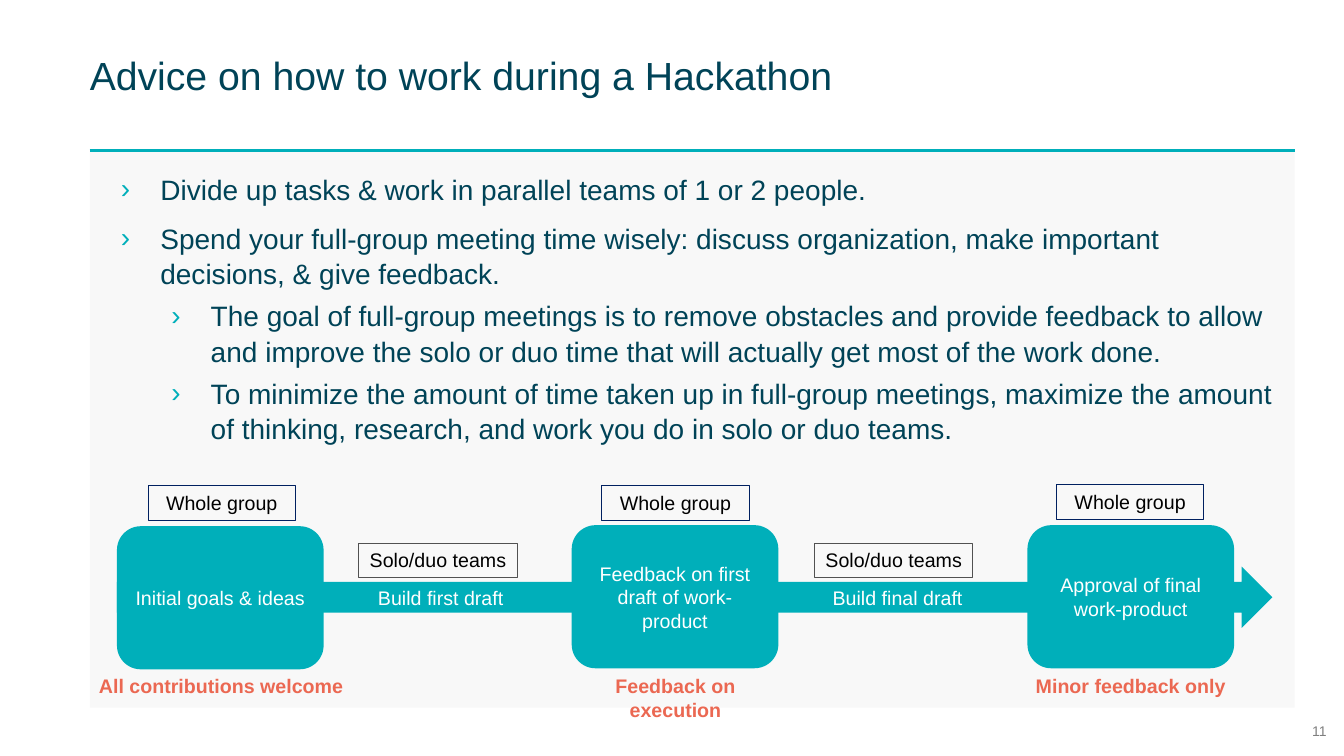
from lxml.etree import SubElement as add_element
from pptx import Presentation
from pptx.dml.color import RGBColor
from pptx.enum.shapes import MSO_CONNECTOR as Connector, MSO_SHAPE as Preset
from pptx.enum.text import MSO_ANCHOR as Anchor, MSO_AUTO_SIZE as AutoSize, PP_ALIGN as Align
from pptx.oxml.ns import qn
from pptx.util import Inches, Pt

TEAL = RGBColor(0x00, 0xAF, 0xBA)
DARK_TEAL = RGBColor(0x00, 0x43, 0x57)
CORAL = RGBColor(0xEB, 0x68, 0x52)
NAVY = RGBColor(0x00, 0x20, 0x60)
DARK_GRAY = RGBColor(0x51, 0x51, 0x51)
MID_GRAY = RGBColor(0x7F, 0x7F, 0x7F)
PALE_GRAY = RGBColor(0xF2, 0xF2, 0xF2)
BLACK = RGBColor(0x00, 0x00, 0x00)
WHITE = RGBColor(0xFF, 0xFF, 0xFF)

LEFT, RULE_TOP, WIDTH, BODY_HEIGHT = 0.89, 1.49, 11.95, 5.53
LABEL_HEIGHT = 0.34
BULLETS = [
    (0, "Divide up tasks & work in parallel teams of 1 or 2 people."),
    (0, "Spend your full-group meeting time wisely: discuss organization, "
        "make important decisions, & give feedback."),
    (1, "The goal of full-group meetings is to remove obstacles and provide feedback "
        "to allow and improve the solo or duo time that will actually get most of the work done."),
    (1, "To minimize the amount of time taken up in full-group meetings, maximize the amount "
        "of thinking, research, and work you do in solo or duo teams."),
]
STAGES = [
    (1.16, 5.22, "Initial goals & ideas", 1.47, 4.82),
    (5.67, 5.21, "Feedback on first draft of work- product", 5.97, 4.82),
    (10.19, 5.21, "Approval of final work-product", 10.48, 4.81),
]
DRAFTS = [(3.56, 3.65, "Build first draft"), (8.08, 8.16, "Build final draft")]
CAPTIONS = [
    (0.86, 2.67, 0.34, "All contributions welcome"),
    (5.53, 2.34, 0.57, "Feedback on execution"),
    (10.14, 2.15, 0.34, "Minor feedback only"),
]


def apply_format(target, values):
    """Set each attribute of the target from a dict of format values."""
    for name, value in values.items():
        setattr(target, name, value)


class SlideBuilder:
    """Hold the style and the current slide, and draw each kind of element."""

    font_name = "Arial"

    def __init__(self, slide):
        """Keep the slide to draw on."""
        self.slide = slide

    def fill_text(self, shape, text, size, color, bold=False, align=Align.CENTER,
                  anchor=Anchor.TOP, inset=(0.1, 0.05)):
        """Put one formatted paragraph into a shape."""
        frame = shape.text_frame
        across, down = (Inches(value) for value in inset)
        apply_format(frame, {
            "word_wrap": True, "auto_size": AutoSize.NONE, "vertical_anchor": anchor,
            "margin_left": across, "margin_right": across,
            "margin_top": down, "margin_bottom": down})
        paragraph = frame.paragraphs[0]
        paragraph.alignment = align
        self.add_run(paragraph, text, size, color, bold)

    def add_run(self, paragraph, text, size, color, bold=False):
        """Add a formatted run to a paragraph."""
        run = paragraph.add_run()
        run.text = text
        apply_format(run.font, {"name": self.font_name, "size": Pt(size), "bold": bold})
        run.font.color.rgb = color

    def shape(self, preset, box, fill=None, line=None, alpha=None):
        """Add a preset shape with an optional fill, outline and opacity."""
        shape = self.slide.shapes.add_shape(preset, *map(Inches, box))
        shape.shadow.inherit = False
        if fill is None:
            shape.fill.background()
        else:
            shape.fill.solid()
            shape.fill.fore_color.rgb = fill
        if line is None:
            shape.line.fill.background()
        else:
            shape.line.color.rgb = line
            shape.line.width = Pt(0.75)
        if alpha is not None:
            color = shape._element.spPr.find(qn("a:solidFill"))[0]
            add_element(color, qn("a:alpha"), val=str(alpha * 1000))
        return shape

    def text(self, box, text, size, color, **style):
        """Add a text box with one paragraph."""
        text_box = self.slide.shapes.add_textbox(*map(Inches, box))
        self.fill_text(text_box, text, size, color, **style)

    def rule(self, left, top, width):
        """Add a horizontal teal line."""
        line = self.slide.shapes.add_connector(
            Connector.STRAIGHT, Inches(left), Inches(top), Inches(left + width), Inches(top))
        line.line.color.rgb = TEAL
        line.line.width = Pt(2)
        add_element(line._element.spPr, qn("a:effectLst"))

    def bullets(self, box, items):
        """Add a text box with a two-level bulleted list."""
        frame = self.slide.shapes.add_textbox(*map(Inches, box)).text_frame
        margins = ("margin_left", "margin_right", "margin_top", "margin_bottom")
        apply_format(frame, {"word_wrap": True, **dict.fromkeys(margins, Inches(0.2))})
        for index, (level, text) in enumerate(items):
            paragraph = frame.add_paragraph() if index else frame.paragraphs[0]
            apply_format(paragraph, {
                "level": level, "line_spacing": 1.05,
                "space_before": Pt((5 if level else 10) if index else 0)})
            properties = paragraph._p.get_or_add_pPr()
            properties.set("marL", str(Inches(0.5 * (level + 1))))
            properties.set("indent", str(Inches(-0.39)))
            bullet_color = add_element(properties, qn("a:buClr"))
            add_element(bullet_color, qn("a:srgbClr"), val=str(TEAL))
            add_element(properties, qn("a:buFont"), typeface=self.font_name)
            add_element(properties, qn("a:buChar"), char="›")
            self.add_run(paragraph, text, 20, DARK_TEAL)

    def stage(self, left, top, text):
        """Add a rounded box for one meeting stage."""
        box = self.shape(Preset.ROUNDED_RECTANGLE, (left, top, 2.05, 1.42), TEAL)
        self.fill_text(box, text, 14, WHITE, anchor=Anchor.MIDDLE)

    def label(self, left, top, width, text, line):
        """Add an outlined label naming who takes part."""
        box = self.shape(Preset.RECTANGLE, (left, top, width, LABEL_HEIGHT), line=line)
        self.fill_text(box, text, 14, BLACK)


def main():
    """Build the slide and save it."""
    presentation = Presentation()
    apply_format(presentation, {"slide_width": Inches(13.33), "slide_height": Inches(7.5)})
    builder = SlideBuilder(presentation.slides.add_slide(presentation.slide_layouts[6]))

    body_box = (LEFT, RULE_TOP, WIDTH, BODY_HEIGHT)
    builder.shape(Preset.RECTANGLE, body_box, PALE_GRAY, alpha=49)
    builder.rule(LEFT, RULE_TOP, WIDTH)
    builder.text((LEFT, 0, WIDTH, 1.48), "Advice on how to work during a Hackathon", 28,
                 DARK_TEAL, align=Align.LEFT, anchor=Anchor.MIDDLE, inset=(0, 0))
    builder.bullets(body_box, BULLETS)
    builder.text((12.84, 7.01, 0.49, 0.49), "11", 10, MID_GRAY,
                 anchor=Anchor.MIDDLE, inset=(0, 0))

    builder.shape(Preset.RIGHT_ARROW, (1.16, 5.62, 11.46, 0.61), TEAL)
    for left, top, text, label_left, label_top in STAGES:
        builder.stage(left, top, text)
        builder.label(label_left, label_top, 1.46, "Whole group", NAVY)
    for label_left, text_left, text in DRAFTS:
        builder.label(label_left, 5.39, 1.57, "Solo/duo teams", DARK_GRAY)
        builder.text((text_left, 5.76, 1.59, LABEL_HEIGHT), text, 14, WHITE, align=Align.LEFT)
    for left, width, height, text in CAPTIONS:
        builder.text((left, 6.64, width, height), text, 14, CORAL, bold=True)

    presentation.save("out.pptx")


if __name__ == "__main__":
    main()
